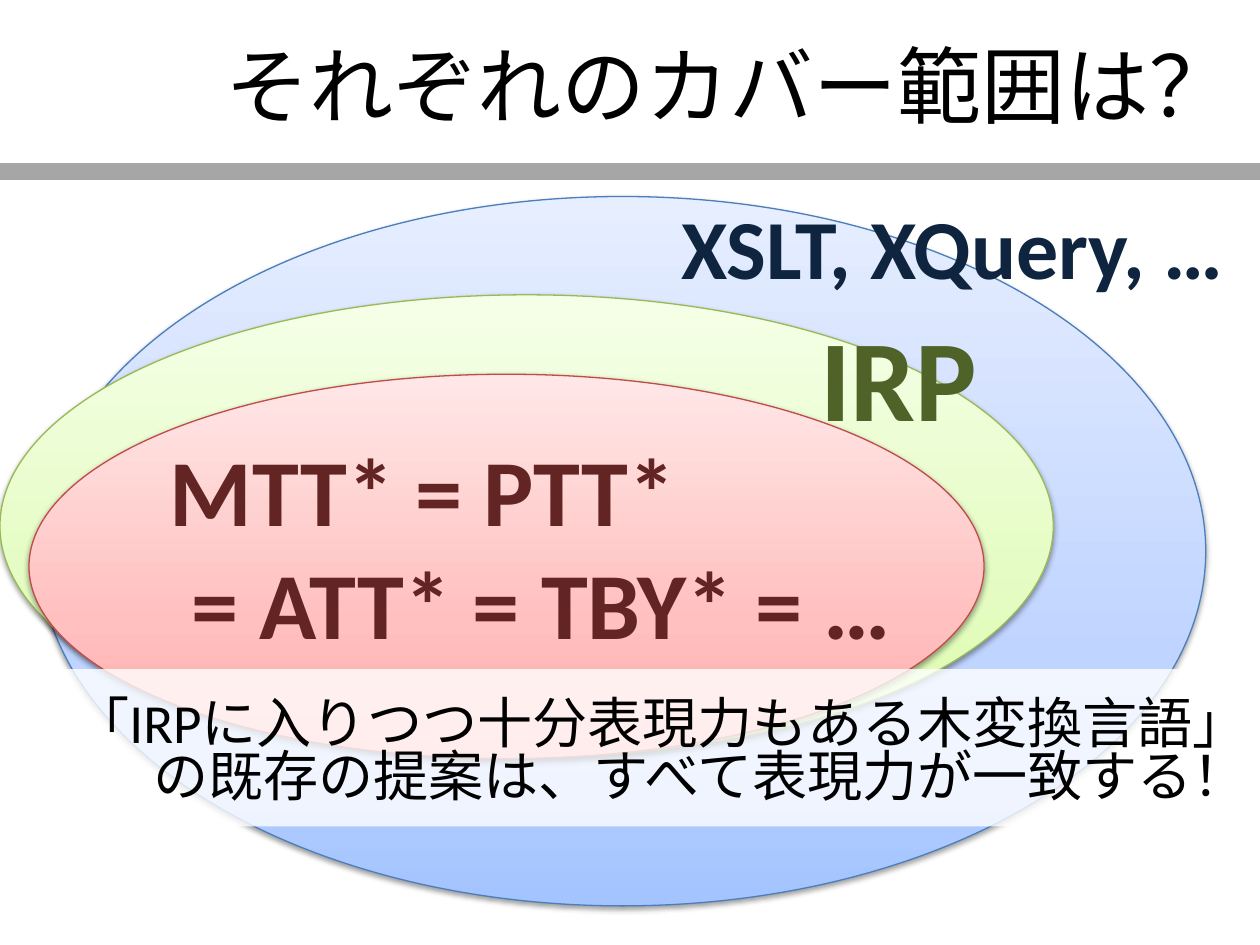
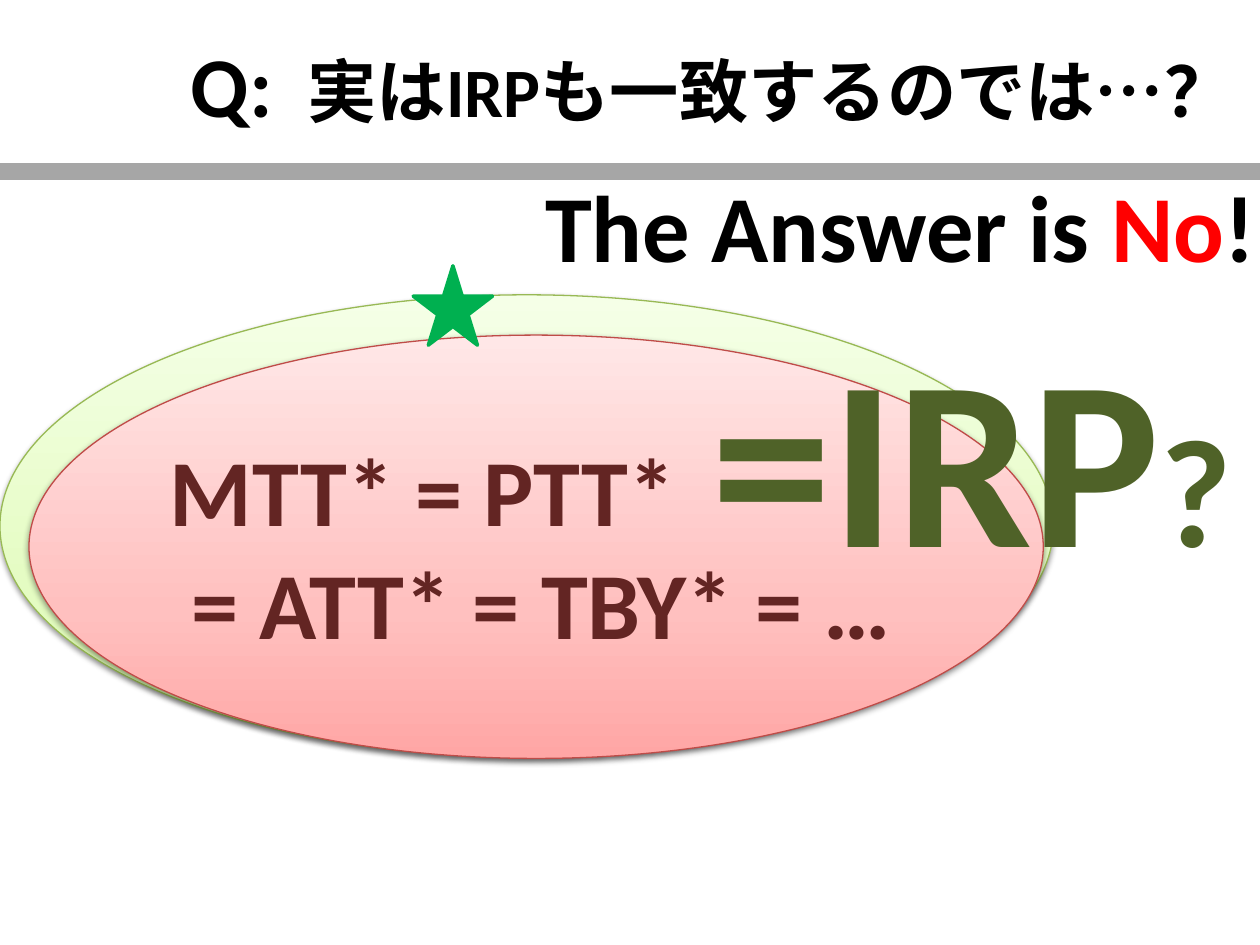
from lxml import etree
from pptx import Presentation
from pptx import util as u
from pptx.dml.color import RGBColor
from pptx.enum import shapes, text
from pptx.oxml.ns import qn

FONT = "Calibri"
COLORS = {
    "black": "000000", "white": "FFFFFF", "band": "A6A6A6", "red": "FF0000",
    "star": "00B050", "navy": "0F243E", "olive": "4F6228", "maroon": "632523",
}
# Gradient colours from bottom to top, then the outline
OVAL_STYLES = {
    "blue": (["A4C4FF", "BFD4FF", "E6EEFF"], "4B7EBC"),
    "green": (["DAFDA7", "E4FCC2", "F5FFE7"], "98B955"),
    "red": (["FFA6A5", "FFC0BF", "FFE7E7"], "BF4C48"),
}
STOPS = [0, 35, 100]
LEFT, RIGHT = text.PP_ALIGN.LEFT, text.PP_ALIGN.RIGHT

# Content: a paragraph is a list of (words, size, colour, bold) runs
COVER_TITLE = [("それぞれのカバー範囲は？", 48, "black", False)]
QUESTION_TITLE = [("Q: ", 48.6, "black", True),
                  (" 実はIRPも一致するのでは…？", 39.6, "black", True)]
XML_LANGUAGES = [("XSLT, XQuery, …", 48, "navy", True)]
IRP = [("IRP", 66, "olive", True)]
IRP_QUESTION = [("=IRP", 138, "olive", True), ("?", 88, "olive", True)]
TRANSDUCERS = [("MTT* = PTT*\n = ATT* = TBY* = …", 54, "maroon", True)]
CONCLUSION = [
    [("「IRPに入りつつ十分表現力もある木変換言語」", 31.5, "black", False)],
    [("の既存の提案は、すべて表現力が一致する！", 31.5, "black", False)],
]
ANSWER = [("The Answer is ", 54, "black", True), ("No", 54, "red", True),
          ("!", 54, "black", True)]

# Places: left, top, width, height in inches
TITLE_AREA = (0.89, 0.04, 9, 1.25)
BAND_Y = 1.36
IRP_OVAL = (0, 2.34, 8.36, 3.67)
TRANSDUCER_TEXT = (1.25, 3.38, 6.33, 1.93)


def rgb(name):
    return RGBColor.from_string(COLORS[name])


def inches(area):
    return [u.Inches(value) for value in area]


def write(frame, paragraphs, align=LEFT, anchor=text.MSO_ANCHOR.TOP, wrap=True):
    frame.word_wrap = wrap
    frame.auto_size = text.MSO_AUTO_SIZE.NONE
    frame.vertical_anchor = anchor
    for index, runs in enumerate(paragraphs):
        para = frame.add_paragraph() if index else frame.paragraphs[0]
        para.alignment = align
        for words, size, color, bold in runs:
            for number, line in enumerate(words.split("\n")):
                if number:
                    para.add_line_break()
                span = para.add_run()
                span.text = line
                span.font.name = FONT
                span.font.size = u.Pt(size)
                span.font.bold = bold
                span.font.color.rgb = rgb(color)


def add_label(page, area, runs, **layout):
    box = page.shapes.add_textbox(*inches(area))
    write(box.text_frame, [runs], **layout)


def add_plain(page, kind, area, color):
    shape = page.shapes.add_shape(kind, *inches(area))
    shape.shadow.inherit = False
    shape.fill.solid()
    shape.fill.fore_color.rgb = rgb(color)
    return shape


def add_color(parent, value, alpha=None):
    node = etree.SubElement(parent, qn("a:srgbClr"), val=value)
    if alpha is not None:
        etree.SubElement(node, qn("a:alpha"), val=str(alpha * 1000))


def add_oval(page, area, style):
    colors, outline = OVAL_STYLES[style]
    oval = page.shapes.add_shape(shapes.MSO_SHAPE.OVAL, *inches(area))
    oval.line.color.rgb = RGBColor.from_string(outline)
    oval.line.width = u.Pt(0.75)
    oval.fill.gradient()
    oval.fill.gradient_angle = 90
    # Three gradient stops
    properties = oval._element.spPr
    stops = properties.find(qn("a:gradFill")).find(qn("a:gsLst"))
    for stop in list(stops):
        stops.remove(stop)
    for position, color in zip(STOPS, colors):
        add_color(etree.SubElement(stops, qn("a:gs"), pos=str(position * 1000)), color)
    # Soft shadow below
    oval.shadow.inherit = False
    shadow = etree.SubElement(
        properties.find(qn("a:effectLst")), qn("a:outerShdw"),
        blurRad=str(u.Pt(3.1)), dist=str(u.Pt(1.6)), dir="5400000", rotWithShape="0")
    add_color(shadow, COLORS["black"], 38)


def add_page(deck, title):
    page = deck.slides.add_slide(deck.slide_layouts[5])
    # Grey band under the title
    y = u.Inches(BAND_Y)
    band = page.shapes.add_connector(
        shapes.MSO_CONNECTOR.STRAIGHT, 0, y, deck.slide_width, y)
    band.line.color.rgb = rgb("band")
    band.line.width = u.Pt(10)
    etree.SubElement(band._element.spPr, qn("a:effectLst"))
    # Title
    heading = page.shapes.title
    heading.left, heading.top, heading.width, heading.height = inches(TITLE_AREA)
    write(heading.text_frame, [title], RIGHT, text.MSO_ANCHOR.MIDDLE)
    return page


def add_cover_page(deck):
    page = add_page(deck, COVER_TITLE)
    # Nested language classes
    add_oval(page, (0.31, 1.56, 9.26, 5.63), "blue")
    add_label(page, (5.31, 1.5, 4.92, 0.91), XML_LANGUAGES, wrap=False)
    add_oval(page, IRP_OVAL, "green")
    add_label(page, (6.41, 2.38, 1.55, 1.21), IRP, wrap=False)
    add_oval(page, (0.23, 2.97, 7.58, 3.05), "red")
    add_label(page, TRANSDUCER_TEXT, TRANSDUCERS, wrap=False)
    # Translucent conclusion panel
    panel = add_plain(page, shapes.MSO_SHAPE.RECTANGLE, (0, 5.31, 10, 1.25), "white")
    panel.line.fill.background()
    color = panel._element.spPr.find(qn("a:solidFill"))[0]
    etree.SubElement(color, qn("a:alpha"), val="80000")
    write(panel.text_frame, CONCLUSION, RIGHT, text.MSO_ANCHOR.MIDDLE)
    panel.text_frame.paragraphs[1].line_spacing = 0.8


def add_question_page(deck):
    page = add_page(deck, QUESTION_TITLE)
    # Nearly equal classes
    add_oval(page, IRP_OVAL, "green")
    add_oval(page, (0.23, 2.66, 8.05, 3.36), "red")
    add_label(page, TRANSDUCER_TEXT, TRANSDUCERS, wrap=False)
    add_label(page, (5.55, 2.38, 4.45, 2.42), IRP_QUESTION, wrap=False)
    # Answer and the star marking the gap
    add_label(page, (1.06, 1.25, 9, 1.06), ANSWER, align=RIGHT,
              anchor=text.MSO_ANCHOR.MIDDLE)
    star = add_plain(page, shapes.MSO_SHAPE.STAR_5_POINT,
                     (3.28, 2.11, 0.63, 0.63), "star")
    star.line.color.rgb = rgb("star")
    star.line.width = u.Pt(2)


def main():
    deck = Presentation()
    deck.slide_width, deck.slide_height = u.Inches(10), u.Inches(7.5)
    add_cover_page(deck)
    add_question_page(deck)
    deck.save("out.pptx")


if __name__ == "__main__":
    main()
